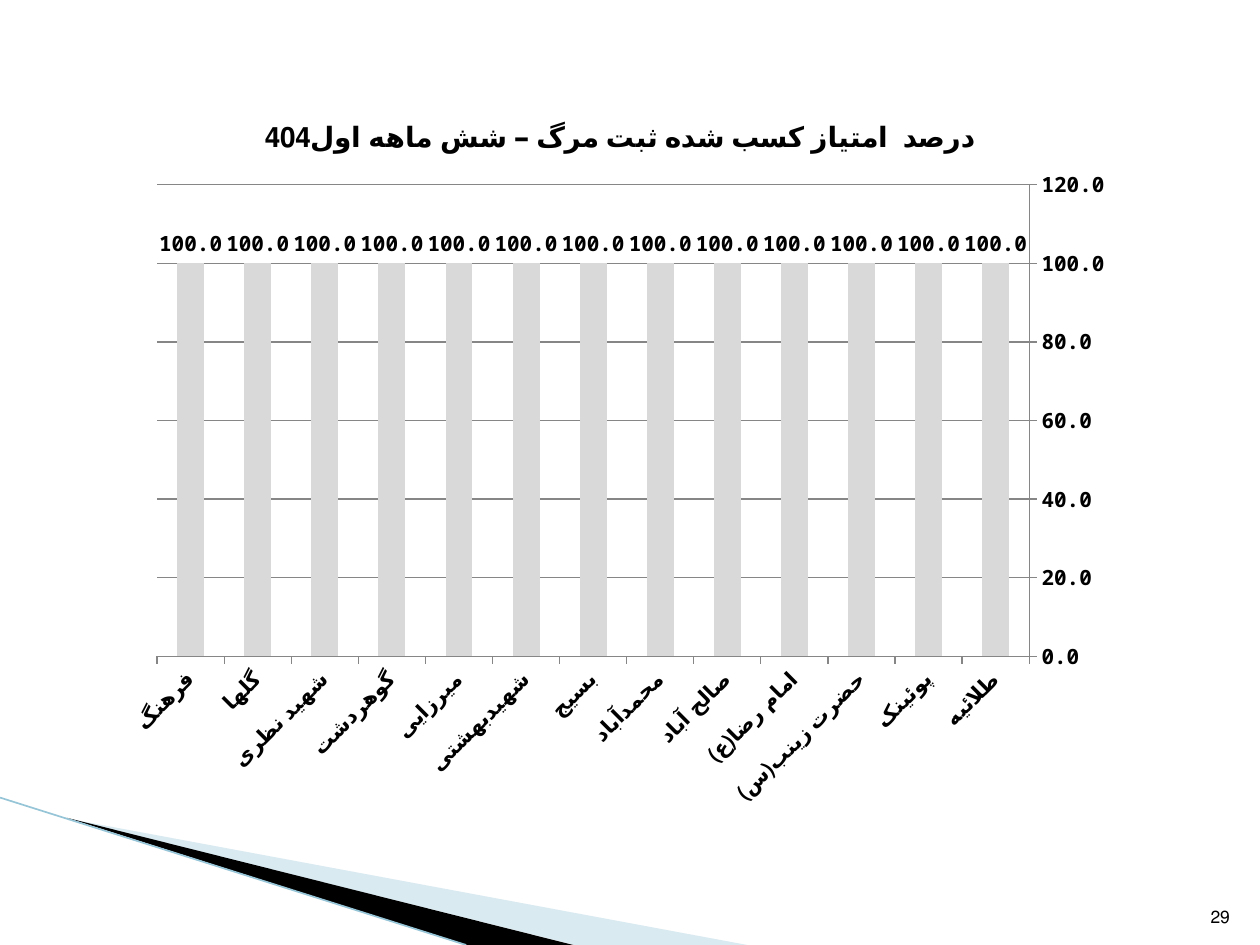
import dataclasses

import lxml.etree
import pptx
import pptx.chart.data
import pptx.dml.color
import pptx.enum.chart
import pptx.enum.shapes
import pptx.enum.text
import pptx.oxml
import pptx.oxml.ns
import pptx.util

Inches = pptx.util.Inches
qn = pptx.oxml.ns.qn


@dataclasses.dataclass
class Theme:
    face: str = "Noto Sans Mono"
    ink: str = "000000"
    pale: str = "A0CBDC"
    edge: str = "97C5D8"
    bar: str = "D9D9D9"
    grid: str = "868686"
    head: int = 16
    label: int = 12
    small: int = 10


class Page:
    def __init__(self, slide, theme):
        self.slide = slide
        self.theme = theme

    def tint(self, color, code):
        color.rgb = pptx.dml.color.RGBColor.from_string(code)

    def style(self, font, size, bold=False):
        font.name = self.theme.face
        font.size = pptx.util.Pt(size)
        font.bold = bold
        self.tint(font.color, self.theme.ink)

    def wedge(self, points, code, alpha=100):
        spots = [(Inches(x), Inches(y)) for x, y in points]
        pen = self.slide.shapes.build_freeform(*spots[0])
        pen.add_line_segments(spots[1:])
        shape = pen.convert_to_shape()
        shape.shadow.inherit = False
        shape.line.fill.background()
        shape.fill.solid()
        self.tint(shape.fill.fore_color, code)
        if alpha < 100:
            color = shape.fill._xPr.find(".//" + qn("a:srgbClr"))
            lxml.etree.SubElement(color, qn("a:alpha"), val=str(alpha * 1000))

    def rule(self, start, end, code, width):
        ends = [Inches(n) for n in (*start, *end)]
        kind = pptx.enum.shapes.MSO_CONNECTOR.STRAIGHT
        line = self.slide.shapes.add_connector(kind, *ends)
        self.tint(line.line.color, code)
        line.line.width = pptx.util.Pt(width)
        lxml.etree.SubElement(line._element.spPr, qn("a:effectLst"))

    def text(self, words, box):
        frame = self.slide.shapes.add_textbox(*map(Inches, box)).text_frame
        frame.word_wrap = True
        frame.vertical_anchor = pptx.enum.text.MSO_ANCHOR.BOTTOM
        para = frame.paragraphs[0]
        para.text = words
        para.alignment = pptx.enum.text.PP_ALIGN.RIGHT
        para._p.get_or_add_pPr().set("rtl", "1")
        self.style(para.font, self.theme.small)

    def axis(self, axis):
        axis.major_tick_mark = pptx.enum.chart.XL_TICK_MARK.OUTSIDE
        axis.minor_tick_mark = pptx.enum.chart.XL_TICK_MARK.NONE
        self.tint(axis.format.line.color, self.theme.grid)
        self.style(axis.tick_labels.font, self.theme.label, True)

    def place(self, chart, box):
        area = chart._chartSpace.chart.plotArea
        for old in area.findall(qn("c:layout")):
            area.remove(old)
        layout = lxml.etree.Element(qn("c:layout"))
        manual = lxml.etree.SubElement(layout, qn("c:manualLayout"))
        parts = [("layoutTarget", "inner"), ("xMode", "edge"), ("yMode", "edge")]
        for tag, val in parts + list(zip("xywh", box)):
            lxml.etree.SubElement(manual, qn("c:" + tag), val=str(val))
        area.insert(0, layout)

    def chart(self, title, names, values, box):
        data = pptx.chart.data.CategoryChartData(number_format="0.0")
        data.categories = names
        data.add_series("Series 1", values)
        kind = pptx.enum.chart.XL_CHART_TYPE.COLUMN_CLUSTERED
        chart = self.slide.shapes.add_chart(kind, *map(Inches, box), data).chart
        self.style(chart.font, self.theme.label)
        chart.has_legend = False
        chart.has_title = True
        chart.chart_title.include_in_layout = False
        para = chart.chart_title.text_frame.paragraphs[0]
        para.text = title
        self.style(para.font, self.theme.head, True)

        cats, vals = chart.category_axis, chart.value_axis
        self.axis(cats)
        self.axis(vals)
        cats.reverse_order = True
        cats._element.find(".//" + qn("a:bodyPr")).set("rot", "-2700000")
        vals.minimum_scale, vals.maximum_scale, vals.major_unit = 0, 120, 20
        vals.has_major_gridlines = True
        self.tint(vals.major_gridlines.format.line.color, self.theme.grid)
        vals.tick_labels.number_format = "0.0"
        vals.tick_labels.number_format_is_linked = False

        plot = chart.plots[0]
        plot.gap_width = 150
        plot.vary_by_categories = False
        fill = plot.series[0].format.fill
        fill.solid()
        self.tint(fill.fore_color, self.theme.bar)
        plot.has_data_labels = True
        labels = plot.data_labels
        labels.show_value = True
        labels.number_format = "0.0"
        labels.number_format_is_linked = False
        labels.position = pptx.enum.chart.XL_LABEL_POSITION.OUTSIDE_END
        self.style(labels.font, self.theme.label, True)
        self.place(chart, (0.042, 0.123, 0.862, 0.651))


def main():
    deck = pptx.Presentation()
    deck.slide_width, deck.slide_height = Inches(10), Inches(7.5)
    theme = Theme()
    page = Page(deck.slides.add_slide(deck.slide_layouts[6]), theme)
    page.wedge([(0.55, 6.5), (5.93, 7.5), (4.56, 7.5)], theme.pale, 40)
    page.wedge([(0.53, 6.49), (4.55, 7.5), (3.7, 7.5)], theme.ink)
    page.rule((0, 6.33), (3.7, 7.5), theme.edge, 0.95)
    page.text("29", (9.46, 7.01, 0.4, 0.4))
    names = [
        "طلائیه", "پوئینک", "حضرت زینب(س)", "امام رضا(ع)", "صالح آباد",
        "محمدآباد", "بسیج", "شهیدبهشتی", "میرزایی", "گوهردشت",
        "شهید نظری", "گلها", "فرهنگ",
    ]
    page.chart(
        "درصد  امتیاز کسب شده ثبت مرگ – شش ماهه اول404",
        names, [100] * len(names), (0.91, 0.76, 8.03, 5.75),
    )
    deck.save("out.pptx")


if __name__ == "__main__":
    main()
